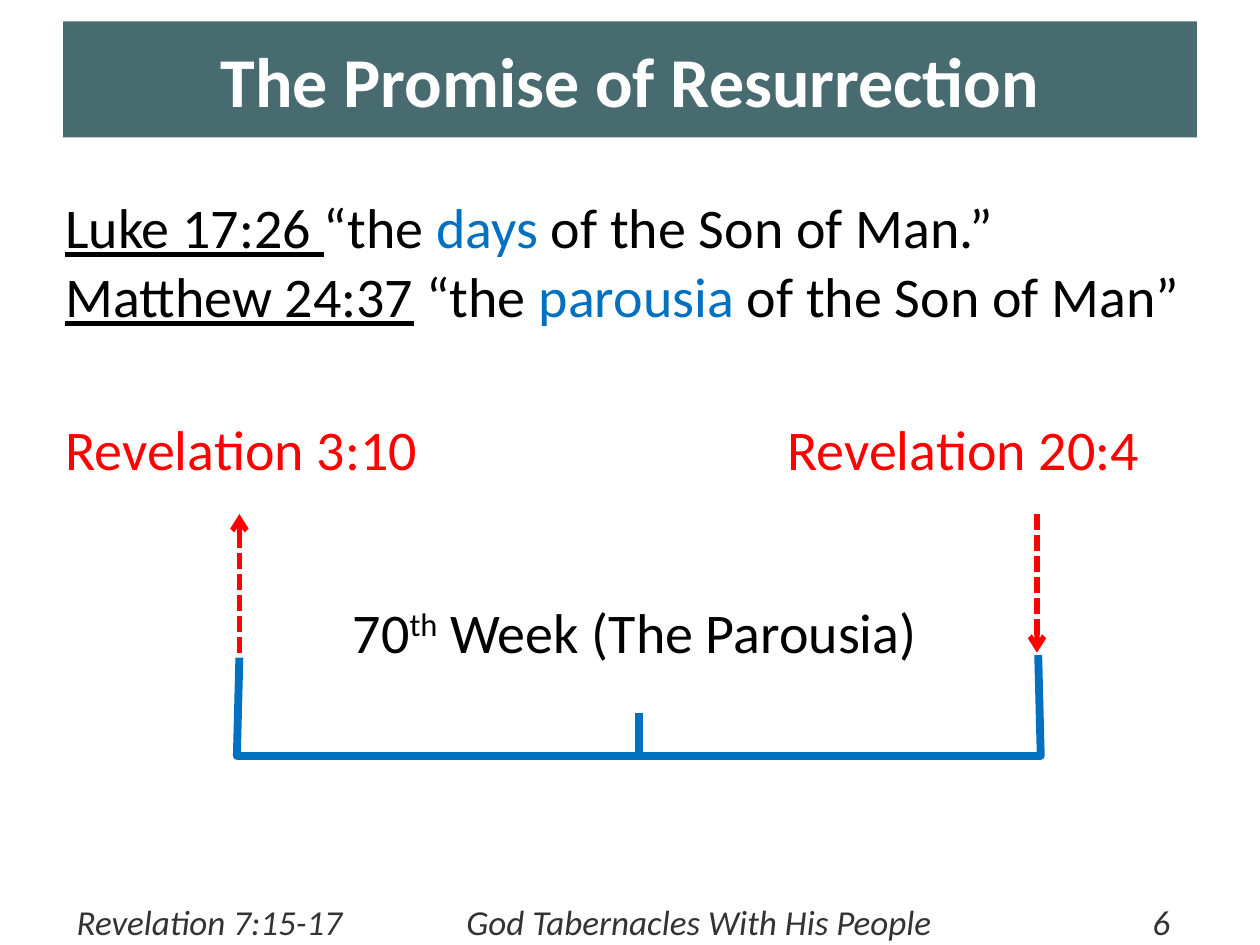
from lxml import etree
from pptx import Presentation
from pptx.dml.color import RGBColor
from pptx.enum.dml import MSO_LINE
from pptx.enum.shapes import MSO_CONNECTOR
from pptx.enum.text import MSO_ANCHOR, PP_ALIGN
from pptx.oxml.ns import qn
from pptx.util import Inches, Pt

STRAIGHT = MSO_CONNECTOR.STRAIGHT
DASH = MSO_LINE.SQUARE_DOT
MIDDLE = MSO_ANCHOR.MIDDLE
LEFT, CENTER = PP_ALIGN.LEFT, PP_ALIGN.CENTER
BLACK, WHITE, RED, BLUE = "000000", "FFFFFF", "FF0000", "0070C0"
TEAL, GRAY = "486B70", "333333"


def color(code):
    """Turn a hex string into a colour."""
    return RGBColor.from_string(code)


def write(frame, runs, size=32, align=LEFT):
    """Write runs of (text, hex colour, font values) in one paragraph."""
    para = frame.paragraphs[0]
    para.alignment = align
    for text, code, style in runs:
        run = para.add_run()
        run.text = text
        run.font.color.rgb = color(code)
        values = {"name": "Calibri", "size": Pt(size), **style}
        for key, value in values.items():
            setattr(run.font, key, value)
    return para


def label(shapes, box, runs, size=32, align=LEFT):
    """Add a wrapped text box and return its frame."""
    frame = shapes.add_textbox(*map(Inches, box)).text_frame
    frame.word_wrap = True
    write(frame, runs, size, align)
    return frame


def stroke(shape, code, width):
    """Set a line's colour and width and clear its effects."""
    shape.line.color.rgb = color(code)
    shape.line.width = Pt(width)
    etree.SubElement(shape._element.spPr, qn("a:effectLst"))


def rule(shapes, start, end, code, width):
    """Draw a straight line between two points."""
    line = shapes.add_connector(STRAIGHT, *map(Inches, start + end))
    stroke(line, code, width)
    return line


def arrow(shapes, start, end):
    """Draw a dashed red arrow."""
    line = rule(shapes, start, end, RED, 3)
    line.line.dash_style = DASH
    etree.SubElement(line.line._get_or_add_ln(), qn("a:tailEnd"), type="arrow")


def footer(shapes, box):
    """Place the footer with its tab stops."""
    text = "Revelation 7:15-17 \tGod Tabernacles With His People\t 6"
    frame = label(shapes, box, [(text, GRAY, {"italic": True})], 20)
    frame.vertical_anchor = MIDDLE
    props = frame.paragraphs[0]._p.get_or_add_pPr()
    tabs = etree.SubElement(props, qn("a:tabLst"))
    for pos, kind in ((4.94, "ctr"), (8.68, "r")):
        etree.SubElement(tabs, qn("a:tab"), pos=str(Inches(pos)), algn=kind)


def banner(title, box):
    """Place and fill the title."""
    for key, value in zip(("left", "top", "width", "height"), box):
        setattr(title, key, Inches(value))
    title.fill.solid()
    title.fill.fore_color.rgb = color(TEAL)
    title.text_frame.vertical_anchor = MIDDLE
    runs = [("The Promise of Resurrection", WHITE, {"bold": True})]
    write(title.text_frame, runs, 40, CENTER)


def verses(shapes, box):
    """Place the two verse lines down the box."""
    left, top, width, height = box
    lines = [("Luke 17:26 ", "“the ", "days", " of the Son of Man.”"),
             ("Matthew 24:37", " “the ", "parousia", " of the Son of Man”")]
    for row, (ref, lead, word, rest) in enumerate(lines):
        runs = [(ref, BLACK, {"underline": True}), (lead, BLACK, {}),
                (word, BLUE, {}), (rest, BLACK, {})]
        label(shapes, (left, top + row * 0.55, width, height), runs)


def events(shapes, box):
    """Place the two red references and their arrows."""
    left, top, width, height = box
    high, low = top + 0.84, top + 1.94
    marks = [("Revelation 3:10", left, 1.9, low, high),
             ("Revelation 20:4", left + width - 3.58, 8.23, high, low)]
    for text, x, mid, start, end in marks:
        arrow(shapes, (mid, start), (mid, end))
        label(shapes, (x, top, 3.58, height), [(text, RED, {})])


def week(shapes, box):
    """Place the bracket of the week with its caption and tick."""
    left, top, width, height = box
    right, base = left + width, top + height
    group = shapes.add_group_shape().shapes
    runs = [("70", BLACK, {}), ("th", BLACK, {}),
            (" Week (The Parousia)", BLACK, {})]
    frame = label(group, (2.5, top - 0.51, 5.08, 0.64), runs, align=CENTER)
    frame.paragraphs[0].runs[1]._r.get_or_add_rPr().set("baseline", "30000")
    mid = left + width / 2
    rule(group, (mid, base - 0.34), (mid, base), BLUE, 4.5)
    points = [(left + 0.02, top + 0.02), (left, base), (right, base),
              (right - 0.02, top)]
    first, *rest = [tuple(map(Inches, point)) for point in points]
    pen = group.build_freeform(*first)
    pen.add_line_segments(rest, close=False)
    shape = pen.convert_to_shape()
    shape.fill.background()
    stroke(shape, BLUE, 4.5)


def main():
    """Build and save the slide."""
    deck = Presentation()
    deck.slide_width, deck.slide_height = Inches(10), Inches(7.5)
    slide = deck.slides.add_slide(deck.slide_layouts[5])
    shapes = slide.shapes
    footer(shapes, (0.51, 7.13, 9, 0.37))
    banner(shapes.title, (0.5, 0.17, 9, 0.92))
    events(shapes, (0.42, 3.24, 9.31, 0.64))
    verses(shapes, (0.42, 1.48, 9.25, 0.64))
    week(shapes, (1.88, 5.2, 6.38, 0.8))
    deck.save("out.pptx")


if __name__ == "__main__":
    main()
